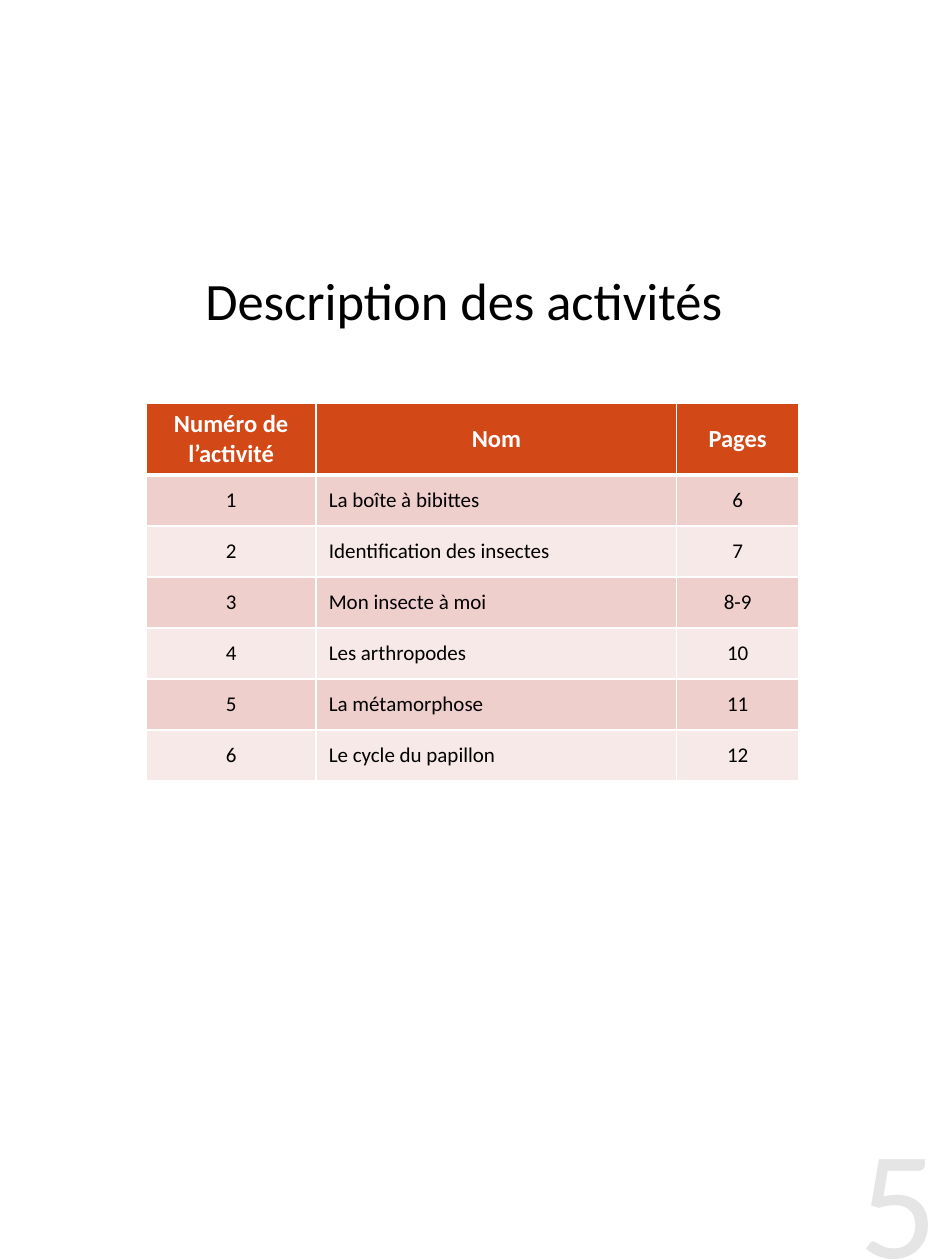
from dataclasses import dataclass

from lxml import etree
from pptx import Presentation
from pptx.dml.color import RGBColor
from pptx.enum.text import MSO_ANCHOR, PP_ALIGN
from pptx.oxml.ns import qn
from pptx.util import Inches, Pt

LEFT, CENTER = PP_ALIGN.LEFT, PP_ALIGN.CENTER
TOP, MIDDLE = MSO_ANCHOR.TOP, MSO_ANCHOR.MIDDLE
FONT = "Calibri"
COLORS = {
    "text": "000000",
    "white": "FFFFFF",
    "header": "D34817",
    "odd": "EFCFCC",
    "even": "F7E9E8",
    "page": "E5E5E5",
}


@dataclass
class Label:
    text: str
    left: float
    top: float
    width: float
    height: float
    size: int
    color: str
    anchor: MSO_ANCHOR
    margin: float


@dataclass
class Activity:
    number: str
    name: str
    pages: str


LABELS = [
    Label("Description des activités ", 0.41, 1.97, 6.64, 0.81, 30, "text", MIDDLE, 0.1),
    Label("5", 6.78, 8.77, 0.7, 1.23, 88, "page", TOP, 0),
]
HEADER = Activity("Numéro de\nl’activité", "Nom", "Pages")
ACTIVITIES = [
    Activity("1", "La boîte à bibittes", "6"),
    Activity("2", "Identification des insectes", "7"),
    Activity("3", "Mon insecte à moi", "8-9"),
    Activity("4", "Les arthropodes", "10"),
    Activity("5", "La métamorphose", "11"),
    Activity("6", "Le cycle du papillon", "12"),
]
COLUMN_WIDTHS = [1.35, 2.86, 0.97]
TABLE_HEIGHT, HEADER_HEIGHT = 3.0, 0.57


def format_text(frame, size: int, color: str, align: PP_ALIGN, bold: bool = False) -> None:
    for paragraph in frame.paragraphs:
        paragraph.alignment = align
        for run in paragraph.runs:
            run.font.name = FONT
            run.font.size = Pt(size)
            run.font.bold = bold
            run.font.color.rgb = RGBColor.from_string(COLORS[color])


def add_label(slide, label: Label) -> None:
    box = slide.shapes.add_textbox(Inches(label.left), Inches(label.top),
                                   Inches(label.width), Inches(label.height))
    frame = box.text_frame
    frame.word_wrap = True
    frame.vertical_anchor = label.anchor
    frame.margin_left = frame.margin_right = Inches(label.margin)
    frame.margin_top = frame.margin_bottom = Inches(label.margin / 2)
    frame.text = label.text
    format_text(frame, label.size, label.color, CENTER)


def set_borders(cell, top: int, bottom: int) -> None:
    properties = cell._tc.get_or_add_tcPr()
    widths = {"a:lnL": 1, "a:lnR": 1, "a:lnT": top, "a:lnB": bottom}
    for position, (tag, width) in enumerate(widths.items()):
        line = etree.Element(qn(tag), w=str(Pt(width)))
        fill = etree.SubElement(line, qn("a:solidFill"))
        etree.SubElement(fill, qn("a:srgbClr"), val=COLORS["white"])
        properties.insert(position, line)


def fill_row(table, row: int, activity: Activity) -> None:
    is_header = row == 0
    fill = "header" if is_header else "odd" if row % 2 else "even"
    for column, text in enumerate([activity.number, activity.name, activity.pages]):
        cell = table.cell(row, column)
        cell.text_frame.text = text
        cell.vertical_anchor = MIDDLE
        cell.fill.solid()
        cell.fill.fore_color.rgb = RGBColor.from_string(COLORS[fill])
        align = LEFT if column == 1 and not is_header else CENTER
        format_text(cell.text_frame, 14 if is_header else 12,
                    "white" if is_header else "text", align, is_header)
        set_borders(cell, top=3 if row == 1 else 1, bottom=3 if is_header else 1)


def add_activity_table(slide) -> None:
    rows = [HEADER, *ACTIVITIES]
    table = slide.shapes.add_table(len(rows), len(COLUMN_WIDTHS), Inches(1.16), Inches(3.2),
                                   Inches(sum(COLUMN_WIDTHS)), Inches(TABLE_HEIGHT)).table
    for column, width in zip(table.columns, COLUMN_WIDTHS):
        column.width = Inches(width)
    body_height = (TABLE_HEIGHT - HEADER_HEIGHT) / len(ACTIVITIES)
    for index, activity in enumerate(rows):
        table.rows[index].height = Inches(body_height if index else HEADER_HEIGHT)
        fill_row(table, index, activity)


def main() -> None:
    presentation = Presentation()
    presentation.slide_width, presentation.slide_height = Inches(7.5), Inches(10)
    slide = presentation.slides.add_slide(presentation.slide_layouts[6])

    # Title and page number
    for label in LABELS:
        add_label(slide, label)

    # Activities and their pages
    add_activity_table(slide)

    presentation.save("out.pptx")


if __name__ == "__main__":
    main()
